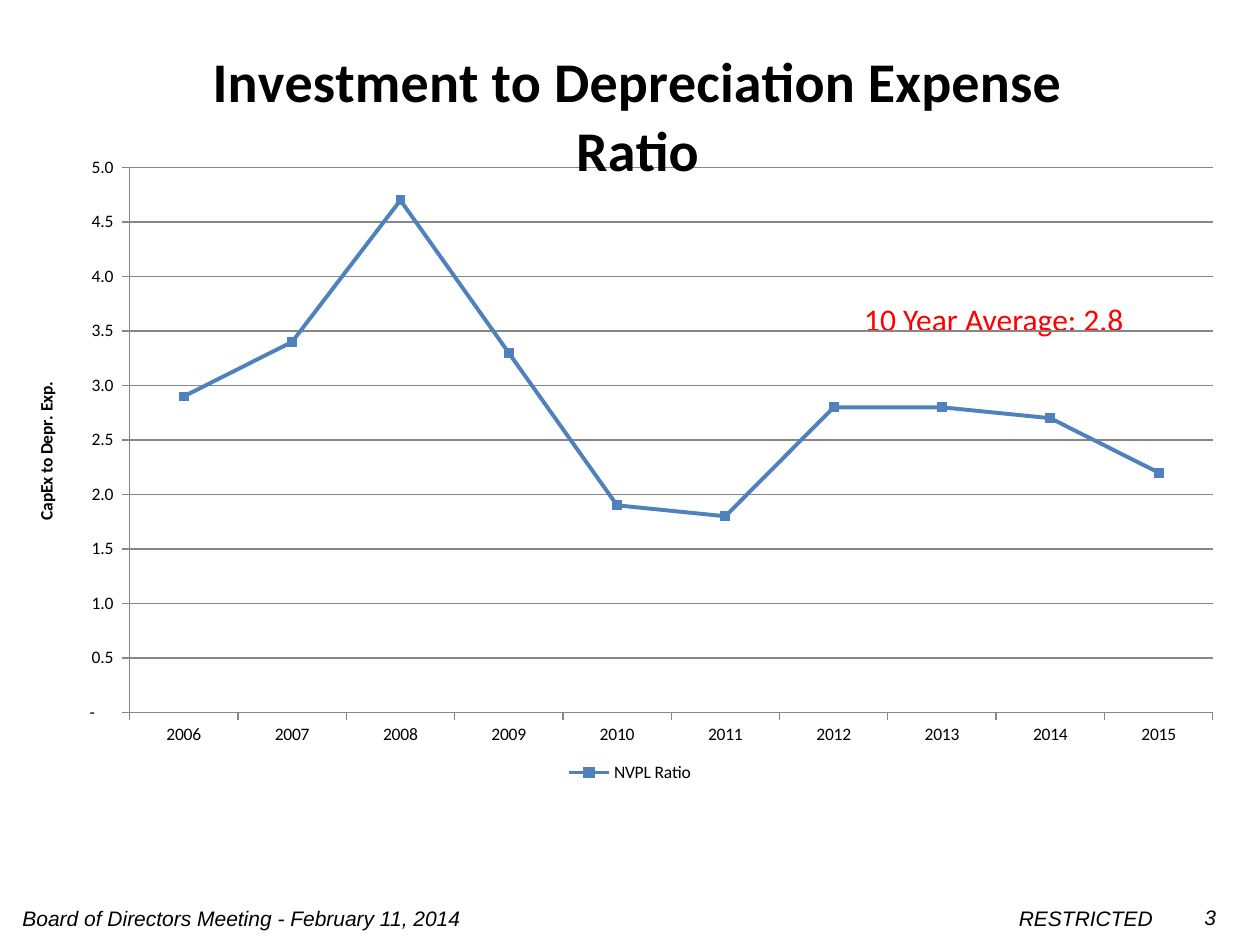
"""Build the investment to depreciation ratio slide."""
from dataclasses import dataclass

import lxml.etree
import pptx
import pptx.chart.chart
import pptx.chart.data
import pptx.dml.color
import pptx.enum.chart
import pptx.enum.text
import pptx.oxml.ns
import pptx.slide
import pptx.util

Inches = pptx.util.Inches
Pt = pptx.util.Pt
qn = pptx.oxml.ns.qn
ALIGN = pptx.enum.text.PP_ALIGN
ANCHOR = pptx.enum.text.MSO_ANCHOR
COLORS = {"text": "000000", "note": "FF0000", "line": "4F81BD", "grid": "868686"}
EDGE = {"xMode": "edge", "yMode": "edge"}
PLOT = {"layoutTarget": "inner"} | EDGE | {"x": 0.082, "y": 0.18, "w": 0.905, "h": 0.721}
HEAD = EDGE | {"x": 0.143, "y": 0}
RATIOS = [2.9, 3.4, 4.7, 3.3, 1.9, 1.8, 2.8, 2.8, 2.7, 2.2]
YEARS = [str(2006 + i) for i in range(len(RATIOS))]
FORMAT = '_(* #,##0.0_);_(* \\(#,##0.0\\);_(* "-"??_);_(@_)'


@dataclass
class Label:
    text: str
    left: float
    top: float
    width: float
    height: float
    size: int = 12
    font: str = "Arial"
    color: str = "text"
    italic: bool = True
    wrap: bool = False
    align: ALIGN = ALIGN.LEFT
    anchor: ANCHOR = ANCHOR.TOP


LABELS = [
    Label("Board of Directors Meeting - February 11, 2014", 0.08, 6.94, 4, 0.5,
          wrap=True, anchor=ANCHOR.BOTTOM),
    Label("RESTRICTED", 7.92, 6.94, 1.33, 0.5, align=ALIGN.RIGHT, anchor=ANCHOR.BOTTOM),
    Label("3", 9.17, 7.13, 0.58, 0.25, align=ALIGN.RIGHT),
    Label("10 Year Average: 2.8", 6.76, 2.33, 2.28, 0.4, size=18, font="Calibri",
          color="note", italic=False),
]


def rgb(name: str) -> pptx.dml.color.RGBColor:
    """Return a named colour."""
    return pptx.dml.color.RGBColor.from_string(COLORS[name])


def write(slide: pptx.slide.Slide, label: Label) -> None:
    """Add one text label."""
    spot = (label.left, label.top, label.width, label.height)
    frame = slide.shapes.add_textbox(*map(Inches, spot)).text_frame
    frame.text = label.text
    frame.word_wrap = label.wrap
    frame.vertical_anchor = label.anchor
    para = frame.paragraphs[0]
    para.alignment = label.align
    font = para.runs[0].font
    font.name, font.size, font.italic = label.font, Pt(label.size), label.italic
    font.color.rgb = rgb(label.color)


def title(owner, text: str, size: int) -> None:
    """Give a chart or an axis a bold title."""
    frame = (owner.chart_title if hasattr(owner, "chart_title") else owner.axis_title).text_frame
    frame.text = text
    font = frame.paragraphs[0].runs[0].font
    font.name, font.size, font.bold = "Calibri", Pt(size), True
    font.color.rgb = rgb("text")


def place(part: lxml.etree.ElementBase, spot: dict, index: int) -> None:
    """Fix a chart part at fractions of the chart."""
    for old in part.findall(qn("c:layout")):
        part.remove(old)
    layout = lxml.etree.Element(qn("c:layout"))
    part.insert(index, layout)
    manual = lxml.etree.SubElement(layout, qn("c:manualLayout"))
    for tag, value in spot.items():
        lxml.etree.SubElement(manual, qn("c:" + tag)).set("val", str(value))


def lay(chart: pptx.chart.chart.Chart) -> None:
    """Place the plot and lay the title over it."""
    root = chart.element.find(qn("c:chart"))
    place(root.find(qn("c:plotArea")), PLOT, 0)
    head = root.find(qn("c:title"))
    place(head, HEAD, 1)
    for old in head.findall(qn("c:overlay")):
        head.remove(old)
    over = lxml.etree.Element(qn("c:overlay"))
    over.set("val", "1")
    head.insert(2, over)


def draw(slide: pptx.slide.Slide) -> None:
    """Add the ratio line chart."""
    kinds = pptx.enum.chart
    data = pptx.chart.data.CategoryChartData(number_format="0.0")
    data.categories = YEARS
    data.add_series("NVPL Ratio", RATIOS)
    spot = map(Inches, (0.25, 0.25, 9.5, 6))
    chart = slide.shapes.add_chart(kinds.XL_CHART_TYPE.LINE_MARKERS, *spot, data).chart
    chart.font.name, chart.font.size = "Calibri", Pt(10)
    chart.font.color.rgb = rgb("text")
    chart.has_title = True
    title(chart, "Investment to Depreciation Expense Ratio", 32)
    chart.has_legend = True
    chart.legend.position = kinds.XL_LEGEND_POSITION.BOTTOM
    chart.legend.include_in_layout = False
    lay(chart)

    scale = chart.value_axis
    scale.minimum_scale, scale.maximum_scale, scale.major_unit = 0, 5, 0.5
    scale.has_major_gridlines = True
    title(scale, "CapEx to Depr. Exp.", 10)
    scale.tick_labels.number_format = FORMAT
    scale.tick_labels.number_format_is_linked = False
    for axis in (scale, chart.category_axis):
        axis.major_tick_mark = kinds.XL_TICK_MARK.OUTSIDE
        axis.minor_tick_mark = kinds.XL_TICK_MARK.NONE
    for part in (scale, chart.category_axis, scale.major_gridlines):
        part.format.line.color.rgb = rgb("grid")
        part.format.line.width = Pt(0.75)

    chart.plots[0].vary_by_categories = False
    series = chart.plots[0].series[0]
    series.smooth = False
    series.format.line.color.rgb = rgb("line")
    series.format.line.width = Pt(2.25)
    mark = series.marker
    mark.style, mark.size = kinds.XL_MARKER_STYLE.SQUARE, 5
    mark.format.fill.solid()
    mark.format.fill.fore_color.rgb = rgb("line")
    mark.format.line.color.rgb = rgb("line")


def main() -> None:
    """Build and save the deck."""
    deck = pptx.Presentation()
    deck.slide_width, deck.slide_height = Inches(10), Inches(7.5)
    slide = deck.slides.add_slide(deck.slide_layouts[6])
    for label in LABELS:
        write(slide, label)
    draw(slide)
    deck.save("out.pptx")


if __name__ == "__main__":
    main()
